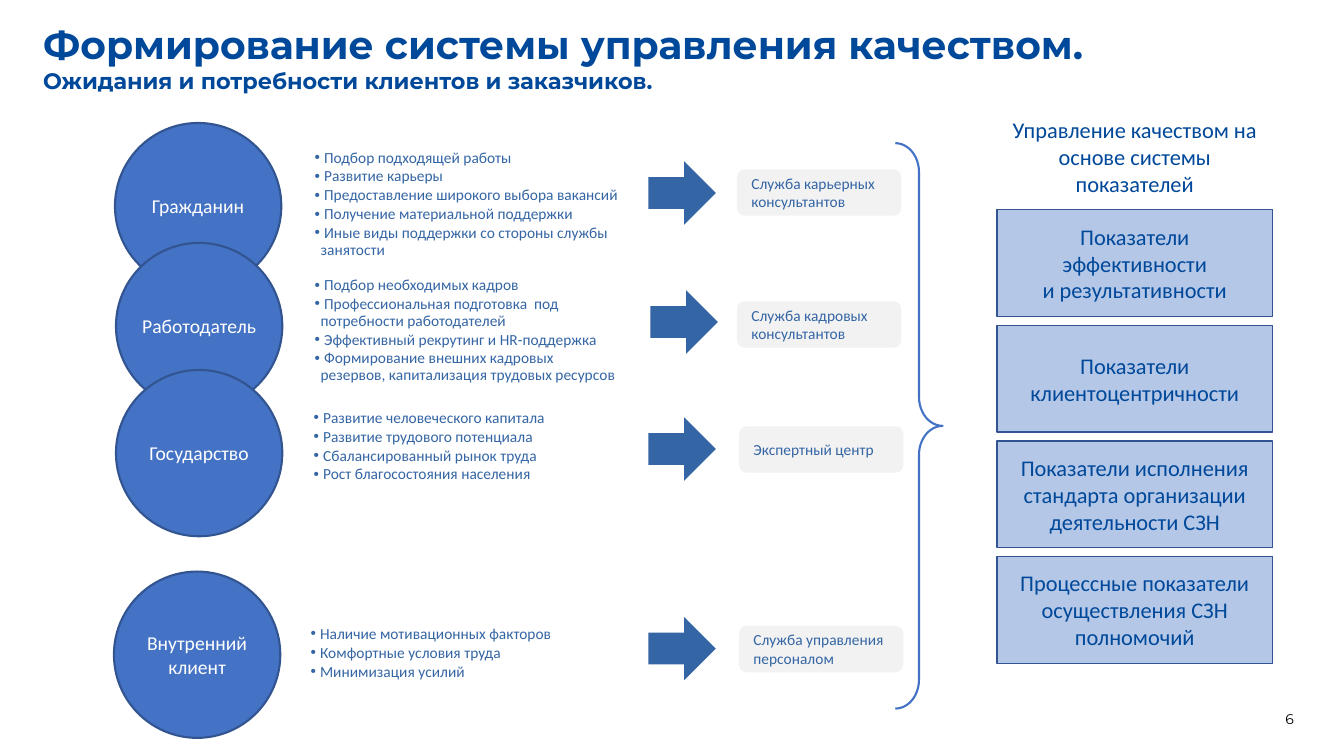
from lxml.etree import SubElement
from pptx import Presentation
from pptx.dml.color import RGBColor
from pptx.enum.shapes import MSO_SHAPE
from pptx.enum.text import MSO_ANCHOR, PP_ALIGN
from pptx.oxml.ns import qn
from pptx.util import Inches, Pt

NAVY = RGBColor(0x00, 0x48, 0x99)
BLUE = RGBColor(0x44, 0x72, 0xC4)
OUTLINE = RGBColor(0x32, 0x54, 0x90)
STEEL = RGBColor(0x34, 0x65, 0xA4)
LIGHT_BLUE = RGBColor(0xB4, 0xC7, 0xE7)
LIGHT_GRAY = RGBColor(0xF2, 0xF2, 0xF2)
WHITE = RGBColor(0xFF, 0xFF, 0xFF)
BLACK = RGBColor(0x00, 0x00, 0x00)

presentation = Presentation()
presentation.slide_width = Inches(13.33)
presentation.slide_height = Inches(7.5)
slide = presentation.slides.add_slide(presentation.slide_layouts[6])


def add_figure(kind, left, top, width, height, fill=None, line=None, line_width=1):
    shape = slide.shapes.add_shape(
        kind, Inches(left), Inches(top), Inches(width), Inches(height))
    shape.shadow.inherit = False
    if fill is None:
        shape.fill.background()
    else:
        shape.fill.solid()
        shape.fill.fore_color.rgb = fill
    if line is None:
        shape.line.fill.background()
    else:
        shape.line.color.rgb = line
        shape.line.width = Pt(line_width)
    return shape


def write(text, shape=None, box=None, size=11, color=STEEL, font="Calibri", bold=False,
          align=PP_ALIGN.LEFT, margins=(0.1, 0.05), after=0, bullets=False):
    if shape is None:
        shape = slide.shapes.add_textbox(*[Inches(value) for value in box])
    frame = shape.text_frame
    frame.word_wrap = True
    frame.vertical_anchor = MSO_ANCHOR.MIDDLE
    frame.margin_left = frame.margin_right = Inches(margins[0])
    frame.margin_top = frame.margin_bottom = Inches(margins[1])
    lines = [text] if isinstance(text, str) else text
    for index, line in enumerate(lines):
        paragraph = frame.paragraphs[0] if index == 0 else frame.add_paragraph()
        paragraph.text = line
        paragraph.alignment = align
        paragraph.space_after = Pt(after)
        if bullets:
            properties = paragraph._p.get_or_add_pPr()
            properties.set("marL", str(Inches(0.06)))
            properties.set("indent", str(-Inches(0.06)))
            bullet_color = SubElement(properties, qn("a:buClr"))
            SubElement(bullet_color, qn("a:srgbClr"), val=str(color))
            SubElement(properties, qn("a:buFont"), typeface="Arial")
            SubElement(properties, qn("a:buChar"), char="•")
            paragraph.line_spacing = 0.9
        for run in paragraph.runs:
            run.font.size = Pt(size)
            run.font.name = font
            run.font.bold = bold
            run.font.color.rgb = color
    return shape


title = write(
    ["Формирование системы управления качеством.",
     "Ожидания и потребности клиентов и заказчиков."],
    box=(0.33, 0.02, 10.95, 1.1), size=28, color=NAVY, font="Montserrat", bold=True)
title.text_frame.paragraphs[1].runs[0].font.size = Pt(16)

clients = [
    ("Гражданин", (1.14, 1.22), (3.12, 1.23, 3.15, 1.59),
     [" Подбор подходящей работы",
      " Развитие карьеры",
      " Предоставление широкого выбора вакансий",
      " Получение материальной поддержки",
      " Иные виды поддержки со стороны службы занятости"],
     (6.43, 1.6), (7.31, 1.68), ["Служба карьерных", "консультантов"]),
    ("Работодатель", (1.15, 2.41), (3.12, 2.65, 2.99, 1.26),
     [" Подбор необходимых кадров",
      " Профессиональная подготовка  под потребности работодателей",
      " Эффективный рекрутинг и HR-поддержка",
      " Формирование внешних кадровых резервов, капитализация трудовых ресурсов"],
     (6.45, 2.88), (7.31, 2.99), ["Служба кадровых", "консультантов"]),
    ("Государство", (1.15, 3.67), (3.11, 3.79, 2.55, 1.28),
     [" Развитие человеческого капитала",
      " Развитие трудового потенциала",
      " Сбалансированный рынок труда",
      " Рост благосостояния населения"],
     (6.43, 4.14), (7.33, 4.23), "Экспертный центр"),
    ("Внутренний клиент", (1.13, 5.67), (3.08, 5.94, 2.58, 1.08),
     [" Наличие мотивационных факторов",
      " Комфортные условия труда",
      " Минимизация усилий"],
     (6.43, 6.12), (7.33, 6.21), "Служба управления персоналом"),
]
for client, circle_at, needs_box, needs, arrow_at, service_at, service in clients:
    circle = add_figure(MSO_SHAPE.OVAL, *circle_at, 1.65, 1.65, BLUE, OUTLINE, 1.5)
    write(client, shape=circle, size=14, color=WHITE, align=PP_ALIGN.CENTER,
          margins=(0, 0.05))
    write(needs, box=needs_box, margins=(0, 0), after=1.6, bullets=True)
    add_figure(MSO_SHAPE.RIGHT_ARROW, *arrow_at, 0.67, 0.63, STEEL)
    label = add_figure(MSO_SHAPE.ROUNDED_RECTANGLE, *service_at, 1.63, 0.46, LIGHT_GRAY)
    write(service, shape=label, margins=(0.12, 0.06))

brace = add_figure(MSO_SHAPE.RIGHT_BRACE, 8.88, 1.42, 0.47, 5.61, line=BLUE, line_width=1.5)
brace.adjustments[0] = 0.61
brace.adjustments[1] = 0.5

write("Управление качеством на основе системы показателей",
      box=(9.89, 1.02, 2.73, 1.06), size=16, color=NAVY, align=PP_ALIGN.CENTER, after=6)

indicators = [
    "Показатели эффективности\vи результативности",
    "Показатели клиентоцентричности",
    "Показатели исполнения\vстандарта организации\vдеятельности СЗН",
    "Процессные показатели\vосуществления СЗН\vполномочий",
]
for index, indicator in enumerate(indicators):
    card = add_figure(MSO_SHAPE.RECTANGLE, 9.89, 2.08 + 1.147 * index, 2.73, 1.06,
                      LIGHT_BLUE, OUTLINE)
    write(indicator, shape=card, size=16, color=NAVY, align=PP_ALIGN.CENTER, after=6)

write("6", box=(9.93, 7, 3, 0.27), size=10, color=BLACK, font="Montserrat",
      align=PP_ALIGN.RIGHT)

presentation.save("out.pptx")
